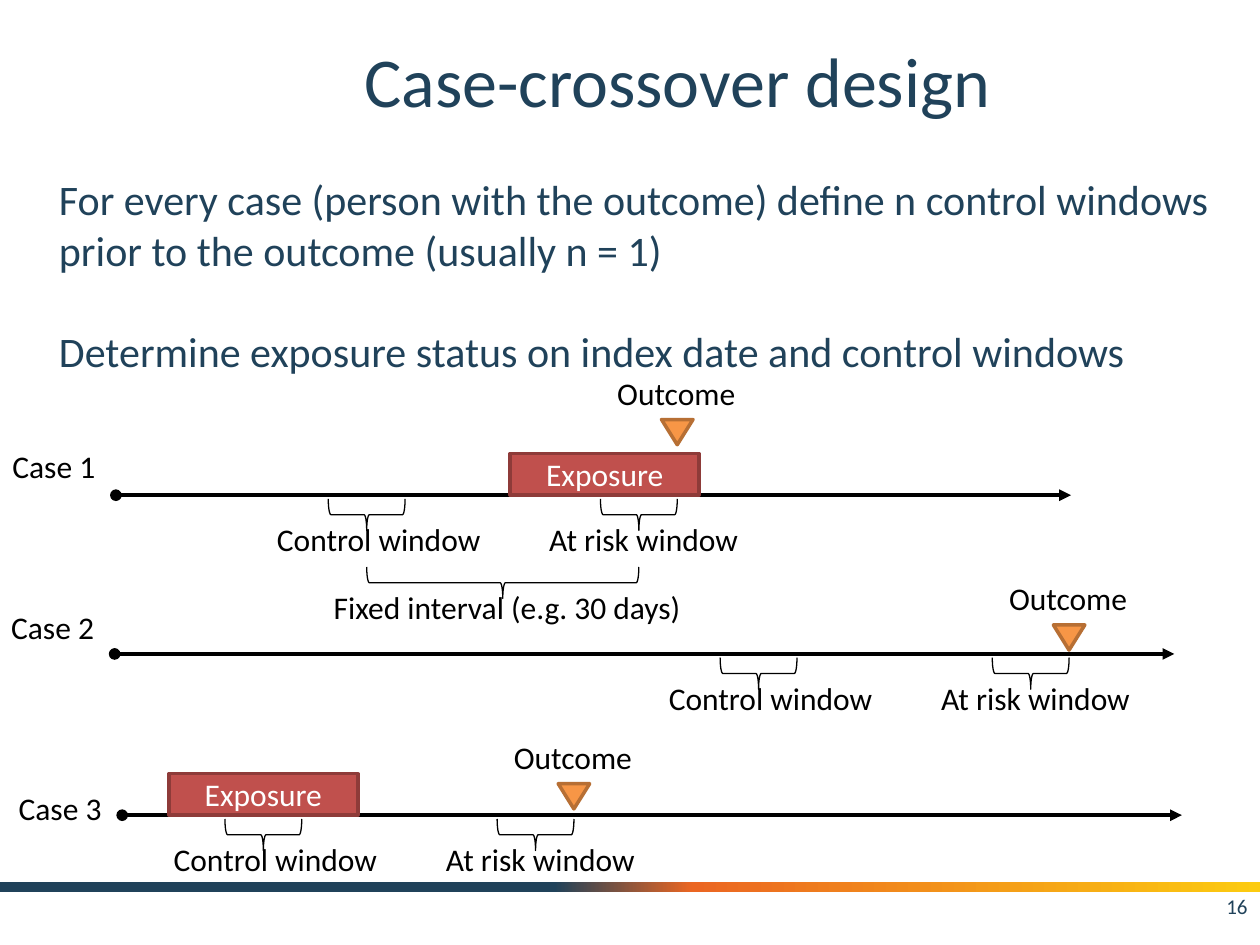
import pptx
import pptx.util
import pptx.oxml
import pptx.dml.color
import pptx.enum.shapes
import pptx.enum.text
from lxml import etree
from pptx.oxml.ns import qn

Inches = pptx.util.Inches
Pt = pptx.util.Pt
SHAPES = pptx.enum.shapes.MSO_SHAPE
ALIGN = pptx.enum.text.PP_ALIGN
ANCHOR = pptx.enum.text.MSO_ANCHOR
AUTO_SIZE = pptx.enum.text.MSO_AUTO_SIZE

COLOURS = {
    "navy": "20425A", "orange": "EB6622", "yellow": "FCCB10",
    "black": "000000", "white": "FFFFFF",
    "exposure": "C0504D", "exposure_line": "8E3B39",
    "outcome": "F79646", "outcome_line": "B76F34",
}

# Outcome is the x of the triangle's tip; the heights are measured up from the line
CASES = [
    {"name": "Case 1", "left": 0.92, "right": 8.5, "y": 3.93, "label_rise": 0.43,
     "outcome": 5.37, "outcome_rise": 0.6, "exposure": 4.05},
    {"name": "Case 2", "left": 0.91, "right": 9.32, "y": 5.19, "label_rise": 0.41,
     "outcome": 8.48, "outcome_rise": 0.23, "exposure": None},
    {"name": "Case 3", "left": 0.97, "right": 9.38, "y": 6.47, "label_rise": 0.26,
     "outcome": 4.55, "outcome_rise": 0.25, "exposure": 1.34},
]
# Distance from the outcome back to the middle of each window, and label width
WINDOWS = {"At risk window": (0.3, 1.72), "Control window": (2.46, 1.84)}
BRACE_DEPTH = 0.25


def rgb(name):
    return pptx.dml.color.RGBColor.from_string(COLOURS[name])


def set_text(shape, paragraphs, size, colour, align=ALIGN.LEFT, gap=0, **frame_format):
    frame = shape.text_frame
    for name, value in frame_format.items():
        setattr(frame, name, value)
    for index, text in enumerate(paragraphs):
        paragraph = frame.paragraphs[0] if index == 0 else frame.add_paragraph()
        paragraph.alignment = align
        if index:
            paragraph.space_before = Pt(gap)
        run = paragraph.add_run()
        run.text = text
        for name, value in {"name": "Calibri", "size": Pt(size)}.items():
            setattr(run.font, name, value)
        run.font.color.rgb = rgb(colour)


def add_text(shapes, box, paragraphs, size, colour, **text_format):
    textbox = shapes.add_textbox(*map(Inches, box))
    set_text(textbox, paragraphs, size, colour, **text_format)


def add_label(shapes, left, top, width, text):
    add_text(shapes, (left, top, width, 0.4), [text], 18, "black",
             word_wrap=False, auto_size=AUTO_SIZE.SHAPE_TO_FIT_TEXT)


def add_block(shapes, kind, box, fill=None, line=None, width=2):
    shape = shapes.add_shape(kind, *map(Inches, box))
    shape.shadow.inherit = False
    for part, colour in ((shape.fill, fill), (shape.line.fill, line)):
        if colour:
            part.solid()
            part.fore_color.rgb = rgb(colour)
        else:
            part.background()
    if line:
        shape.line.width = Pt(width)
    return shape


def add_brace(shapes, centre, top, span):
    """Downward brace: a right brace turned by 90 degrees about its middle."""
    box = (centre - BRACE_DEPTH / 2, top + (BRACE_DEPTH - span) / 2, BRACE_DEPTH, span)
    brace = add_block(shapes, SHAPES.RIGHT_BRACE, box, line="black", width=0.75)
    brace.rotation = 90


def add_timeline(shapes, left, right, y):
    line = shapes.add_connector(pptx.enum.shapes.MSO_CONNECTOR.STRAIGHT,
                                *map(Inches, (left, y, right, y)))
    line.line.width = Pt(2.25)
    line.line.color.rgb = rgb("black")
    outline = line.line._get_or_add_ln()
    for end, kind in {"headEnd": "oval", "tailEnd": "triangle"}.items():
        etree.SubElement(outline, qn("a:" + end), type=kind)
    etree.SubElement(line._element.spPr, qn("a:effectLst"))


def add_windows(shapes, outcome, y):
    for text, (distance, width) in WINDOWS.items():
        group = shapes.add_group_shape()
        centre = outcome - distance
        add_brace(group.shapes, centre, y + 0.03, 0.61)
        add_label(group.shapes, centre - 0.81, y + 0.15, width, text)


def add_case(shapes, case):
    y, outcome = case["y"], case["outcome"]
    add_timeline(shapes, case["left"], case["right"], y)
    add_label(shapes, case["left"] - 0.92, y - case["label_rise"], 0.87, case["name"])
    if case["exposure"] is not None:
        block = add_block(shapes, SHAPES.RECTANGLE, (case["exposure"], y - 0.33, 1.5, 0.33),
                          "exposure", "exposure_line")
        set_text(block, ["Exposure"], 18, "white", align=ALIGN.CENTER,
                 vertical_anchor=ANCHOR.MIDDLE)
    top = y - case["outcome_rise"]
    add_label(shapes, outcome - 0.57, top - 0.41, 1.15, "Outcome")
    add_block(shapes, SHAPES.FLOWCHART_MERGE, (outcome - 0.12, top, 0.25, 0.2),
              "outcome", "outcome_line")
    add_windows(shapes, outcome, y)


def add_fixed_interval(shapes, case):
    """Brace between the middles of the two windows of a case."""
    near, far = (case["outcome"] - distance for distance, _ in WINDOWS.values())
    centre = (near + far) / 2
    add_brace(shapes, centre, case["y"] + 0.57, near - far)
    add_label(shapes, centre - 1.44, case["y"] + 0.69, 2.99, "Fixed interval (e.g. 30 days)")


def add_footer(shapes, box):
    left, top, width, height = box
    band = add_block(shapes, SHAPES.RECTANGLE, box)
    band.fill.gradient()
    band.fill.gradient_angle = 0
    stop_list = band._element.spPr.find(qn("a:gradFill")).find(qn("a:gsLst"))
    for stop in list(stop_list):
        stop_list.remove(stop)
    for position, colour in ((44, "navy"), (55, "orange"), (100, "yellow")):
        stop = etree.SubElement(stop_list, qn("a:gs"), pos=str(position * 1000))
        etree.SubElement(stop, qn("a:srgbClr"), val=COLOURS[colour])
    add_text(shapes, (left + width - 2.33, top - 0.01, 2.33, 0.4), ["16"], 12, "navy",
             align=ALIGN.RIGHT, vertical_anchor=ANCHOR.MIDDLE, word_wrap=True)


def add_heading(shapes, title_box, body_box):
    add_text(shapes, title_box, ["Case-crossover design"], 40, "navy",
             align=ALIGN.CENTER, vertical_anchor=ANCHOR.MIDDLE, word_wrap=True)
    add_text(shapes, body_box, [
        "For every case (person with the outcome) define n control windows "
        "prior to the outcome (usually n = 1)",
        "Determine exposure status on index date and control windows",
    ], 24, "navy", gap=29, word_wrap=True, auto_size=AUTO_SIZE.SHAPE_TO_FIT_TEXT)


def main():
    presentation = pptx.Presentation()
    presentation.slide_width = Inches(10)
    presentation.slide_height = Inches(7.5)
    slide = presentation.slides.add_slide(presentation.slide_layouts[6])
    shapes = slide.shapes

    add_footer(shapes, (0, 7, 10, 0.08))
    add_heading(shapes, (1.25, 0.17, 8.25, 0.92), (0.37, 1.33, 9.5, 1.72))
    for case in CASES:
        add_case(shapes, case)
    add_fixed_interval(shapes, CASES[0])

    presentation.save("out.pptx")


if __name__ == "__main__":
    main()
